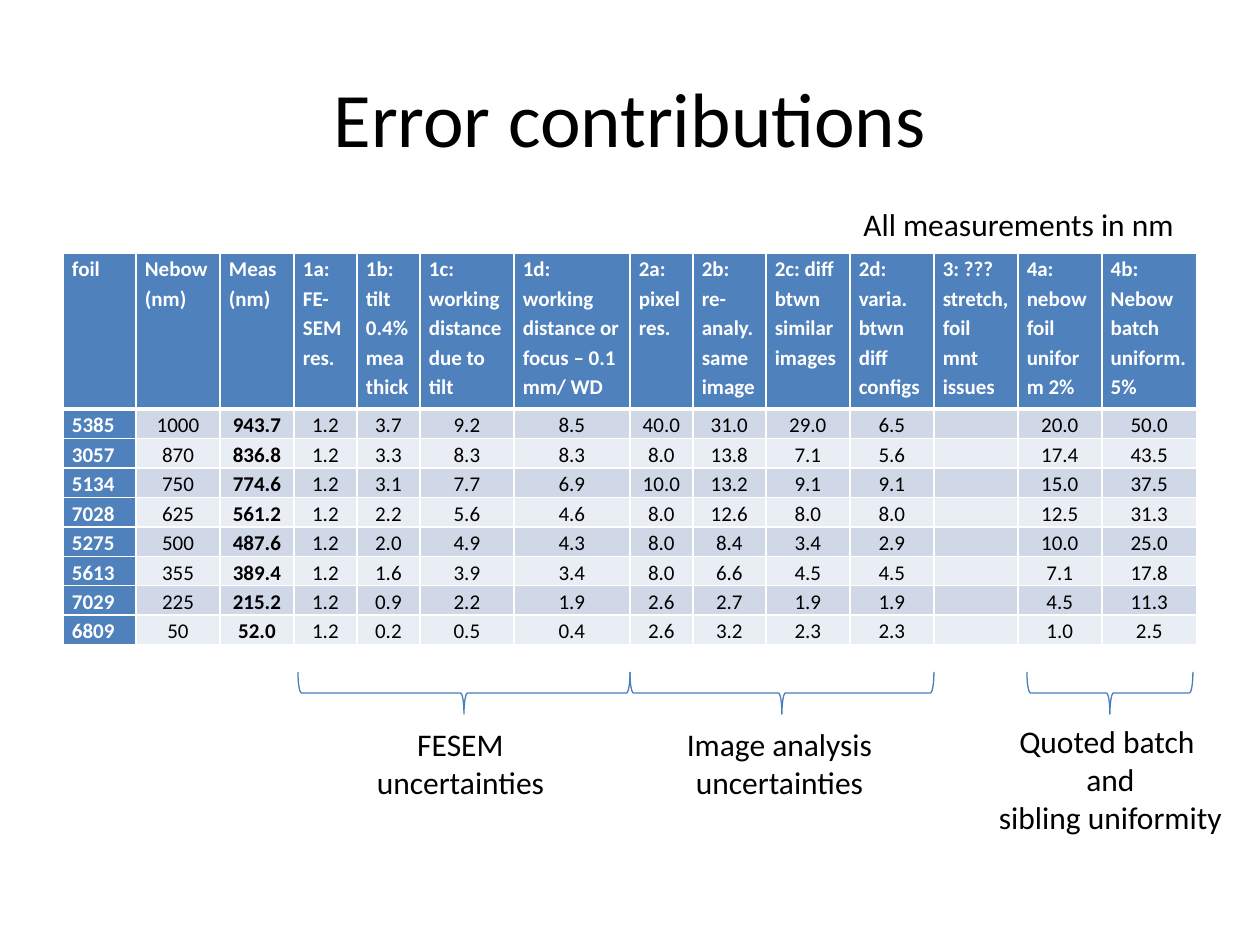
import dataclasses
import pptx
import pptx.dml.color
import pptx.enum.shapes
import pptx.enum.text
import pptx.oxml
import pptx.oxml.ns
import pptx.util

SCALE = 914400 / 126
FONT = "Calibri"
BLUE, WHITE, BLACK = "4F81BD", "FFFFFF", "000000"
BANDS = ("D0D8E8", "E9EDF4")
ALIGN = pptx.enum.text.PP_ALIGN
ANCHOR = pptx.enum.text.MSO_ANCHOR
AUTO = pptx.enum.text.MSO_AUTO_SIZE

WIDTHS = (73, 84, 74, 63, 63, 94, 116, 63, 73, 84, 84, 84, 84, 95)
HEAD_H, ROW_H = 156, 29
HEADS = (
    "foil", "Nebow (nm)", "Meas (nm)", "1a: FE-SEM res.",
    "1b: tilt 0.4% mea\vthick", "1c: working distance due to tilt",
    "1d: working distance or focus – 0.1 mm/ WD", "2a: pixel res.",
    "2b: re-analy. same image", "2c: diff btwn similar images",
    "2d: varia. btwn diff configs", "3: ??? stretch, foil mnt issues",
    "4a: nebow foil uniform 2%", "4b: Nebow batch uniform. 5%",
)
ROWS = (
    ("5385", "1000", "943.7", "1.2", "3.7", "9.2", "8.5", "40.0", "31.0", "29.0", "6.5", "", "20.0", "50.0"),
    ("3057", "870", "836.8", "1.2", "3.3", "8.3", "8.3", "8.0", "13.8", "7.1", "5.6", "", "17.4", "43.5"),
    ("5134", "750", "774.6", "1.2", "3.1", "7.7", "6.9", "10.0", "13.2", "9.1", "9.1", "", "15.0", "37.5"),
    ("7028", "625", "561.2", "1.2", "2.2", "5.6", "4.6", "8.0", "12.6", "8.0", "8.0", "", "12.5", "31.3"),
    ("5275", "500", "487.6", "1.2", "2.0", "4.9", "4.3", "8.0", "8.4", "3.4", "2.9", "", "10.0", "25.0"),
    ("5613", "355", "389.4", "1.2", "1.6", "3.9", "3.4", "8.0", "6.6", "4.5", "4.5", "", "7.1", "17.8"),
    ("7029", "225", "215.2", "1.2", "0.9", "2.2", "1.9", "2.6", "2.7", "1.9", "1.9", "", "4.5", "11.3"),
    ("6809", "50", "52.0", "1.2", "0.2", "0.5", "0.4", "2.6", "3.2", "2.3", "2.3", "", "1.0", "2.5"),
)


@dataclasses.dataclass
class Label:
    text: str
    x: int
    y: int
    w: int
    h: int
    size: int = 18
    align: ALIGN = ALIGN.CENTER
    wrap: bool = False


@dataclasses.dataclass
class Brace:
    x: int
    w: int
    y: int = 672
    h: int = 42


LABELS = (
    Label("Error contributions", 63, 38, 1134, 158, 44, wrap=True),
    Label("All measurements in nm", 851, 199, 339, 50, align=ALIGN.LEFT),
    Label("FESEM \nuncertainties ", 363, 719, 202, 89),
    Label("Image analysis \nuncertainties ", 673, 719, 220, 89),
    Label("Quoted batch \nand\nsibling uniformity", 985, 716, 251, 127),
)
BRACES = (Brace(298, 332), Brace(630, 304), Brace(1027, 166))


def px(num: float) -> int:
    return round(num * SCALE)


def tint(code: str) -> pptx.dml.color.RGBColor:
    return pptx.dml.color.RGBColor.from_string(code)


def style(para, size: int, code: str, bold: bool = False) -> None:
    for run in para.runs:
        run.font.name = FONT
        run.font.size = pptx.util.Pt(size)
        run.font.bold = bold
        run.font.color.rgb = tint(code)


def edge(cell, tag: str, width: int, spot: int) -> None:
    xml = (f'<a:{tag} {pptx.oxml.ns.nsdecls("a")} w="{width * 12700}"><a:solidFill>'
           f'<a:srgbClr val="{WHITE}"/></a:solidFill></a:{tag}>')
    cell._tc.get_or_add_tcPr().insert(spot, pptx.oxml.parse_xml(xml))


def draw_cell(cell, text: str, row: int, col: int) -> None:
    key = row == 0 or col == 0
    cell.margin_left = cell.margin_right = px(9)
    cell.margin_top = cell.margin_bottom = 0
    cell.fill.solid()
    cell.fill.fore_color.rgb = tint(BLUE if key else BANDS[(row - 1) % 2])
    cell.text_frame.text = text
    para = cell.text_frame.paragraphs[0]
    para.line_spacing = 1.15
    para.alignment = ALIGN.LEFT if key else ALIGN.CENTER
    style(para, 12, WHITE if key else BLACK, key or col == 2)
    if not text:
        para._p.get_or_add_endParaRPr().set("sz", "1200")
    sides = {"lnL": 1, "lnR": 1, "lnT": 3 if row == 1 else 1, "lnB": 3 if row == 0 else 1}
    for spot, (tag, width) in enumerate(sides.items()):
        edge(cell, tag, width, spot)


def draw_table(slide) -> None:
    data = (HEADS,) + ROWS
    tall = HEAD_H + ROW_H * len(ROWS)
    table = slide.shapes.add_table(
        len(data), len(HEADS), px(63), px(253), px(sum(WIDTHS)), px(tall)).table
    for col, width in zip(table.columns, WIDTHS):
        col.width = px(width)
    for num, texts in enumerate(data):
        table.rows[num].height = px(ROW_H if num else HEAD_H)
        for col, text in enumerate(texts):
            draw_cell(table.cell(num, col), text, num, col)


def draw_label(slide, item: Label) -> None:
    box = slide.shapes.add_textbox(px(item.x), px(item.y), px(item.w), px(item.h))
    frame = box.text_frame
    frame.text = item.text
    frame.word_wrap = item.wrap
    frame.auto_size = AUTO.NONE if item.wrap else AUTO.SHAPE_TO_FIT_TEXT
    frame.vertical_anchor = ANCHOR.MIDDLE if item.wrap else ANCHOR.TOP
    for para in frame.paragraphs:
        para.alignment = item.align
        style(para, item.size, BLACK)


def draw_brace(slide, item: Brace) -> None:
    shift = (item.w - item.h) / 2
    shape = slide.shapes.add_shape(
        pptx.enum.shapes.MSO_SHAPE.LEFT_BRACE,
        px(item.x + shift), px(item.y - shift), px(item.h), px(item.w))
    shape.rotation = 270
    shape.shadow.inherit = False
    shape.fill.background()
    shape.line.color.rgb = tint("4B7EBC")
    shape.line.width = pptx.util.Pt(0.75)


def main() -> None:
    deck = pptx.Presentation()
    deck.slide_width, deck.slide_height = px(1260), px(945)
    slide = deck.slides.add_slide(deck.slide_layouts[6])
    draw_table(slide)
    for item in BRACES:
        draw_brace(slide, item)
    for item in LABELS:
        draw_label(slide, item)
    deck.save("out.pptx")


if __name__ == "__main__":
    main()
